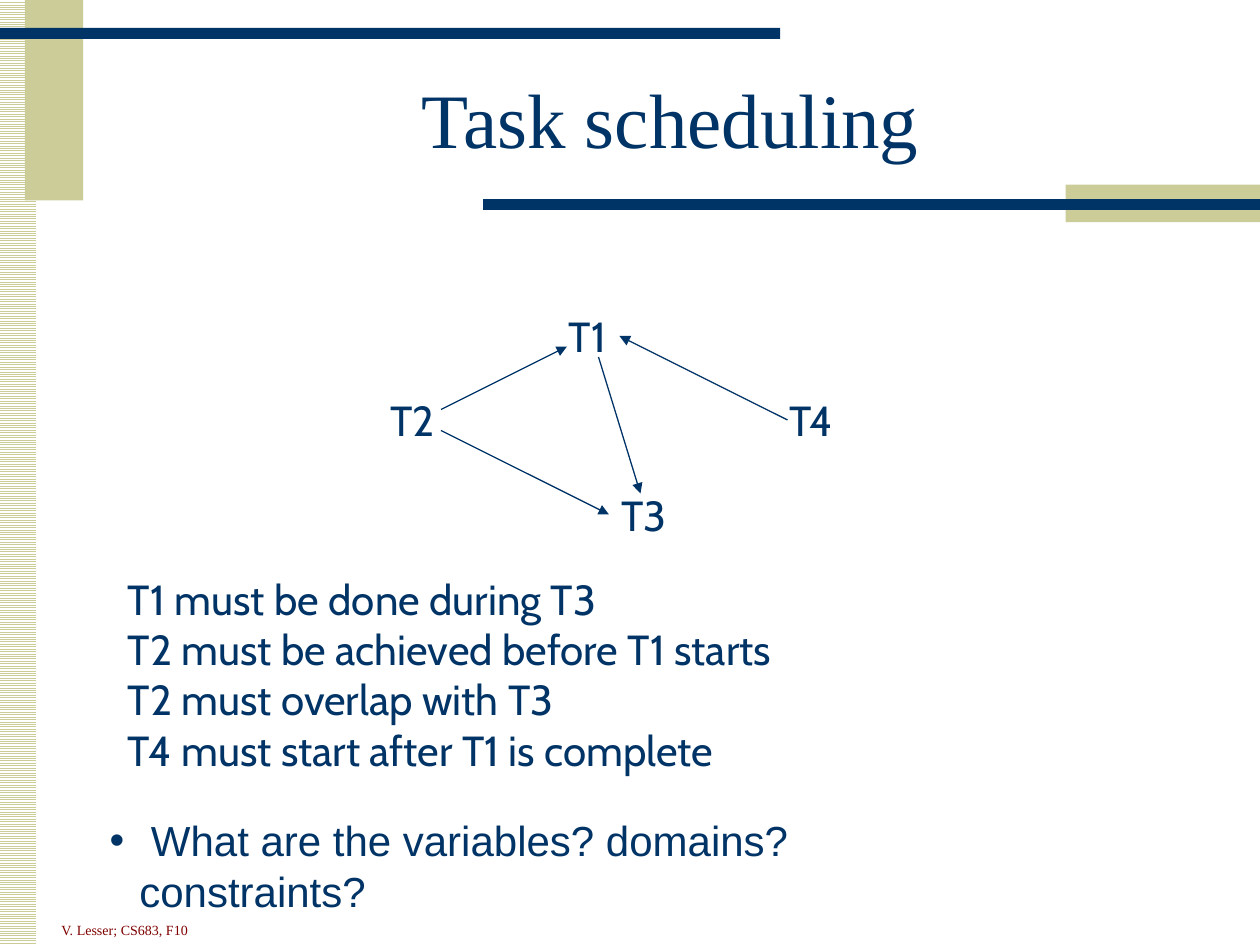
from dataclasses import dataclass

from lxml.etree import SubElement
from pptx import Presentation
from pptx.dml.color import RGBColor
from pptx.enum.dml import MSO_PATTERN
from pptx.enum.shapes import MSO_CONNECTOR, MSO_SHAPE
from pptx.enum.text import MSO_ANCHOR, PP_ALIGN
from pptx.oxml.ns import qn
from pptx.util import Pt


@dataclass(frozen=True)
class Theme:
    navy: RGBColor = RGBColor(0x00, 0x33, 0x66)
    khaki: RGBColor = RGBColor(0xCC, 0xCC, 0x99)
    white: RGBColor = RGBColor(0xFF, 0xFF, 0xFF)
    maroon: RGBColor = RGBColor(0x80, 0x00, 0x00)
    serif: str = "Times New Roman"
    sans: str = "Arial"
    label: str = "Cabin"
    title_size: int = 44
    body_size: int = 24
    footer_size: int = 8
    line_width: float = 0.75


THEME = Theme()
NODE_SIZE = (42, 36)
NODES = {"T1": (318, 174), "T2": (216, 222), "T3": (348, 276), "T4": (444, 222)}
ARROWS = [
    ((342, 204), (366, 282)),
    ((252, 234), (324, 198)),
    ((252, 246), (348, 294)),
    ((450, 240), (354, 192)),
]
RULES = [
    "T1 must be done during T3",
    "T2 must be achieved before T1 starts",
    "T2 must overlap with T3",
    "T4 must start after T1 is complete",
]


def add_bar(s, box, color, striped=False):
    sp = s.shapes.add_shape(MSO_SHAPE.RECTANGLE, *map(Pt, box))
    sp.shadow.inherit = False
    sp.line.fill.background()
    if striped:
        sp.fill.patterned()
        sp.fill.pattern = MSO_PATTERN.LIGHT_HORIZONTAL
        sp.fill.fore_color.rgb = color
        sp.fill.back_color.rgb = THEME.white
    else:
        sp.fill.solid()
        sp.fill.fore_color.rgb = color


def add_bullet(p, indent):
    pPr = p._p.get_or_add_pPr()
    pPr.set("marL", str(Pt(indent)))
    pPr.set("indent", str(-Pt(indent)))
    SubElement(pPr, qn("a:buFont")).set("typeface", THEME.sans)
    SubElement(pPr, qn("a:buChar")).set("char", "•")


def add_text(s, text, box, *, font=THEME.label, size=THEME.body_size,
             color=THEME.navy, align=PP_ALIGN.LEFT, anchor=MSO_ANCHOR.TOP,
             spacing=None, bullet_indent=None):
    tf = s.shapes.add_textbox(*map(Pt, box)).text_frame
    tf.word_wrap = True
    tf.vertical_anchor = anchor
    tf.text = text
    for p in tf.paragraphs:
        p.alignment = align
        if spacing:
            p.line_spacing = spacing
        if bullet_indent:
            add_bullet(p, bullet_indent)
        for r in p.runs:
            r.font.name = font
            r.font.size = Pt(size)
            r.font.color.rgb = color


def add_arrow(s, start, end):
    c = s.shapes.add_connector(MSO_CONNECTOR.STRAIGHT, *map(Pt, start + end))
    c.line.color.rgb = THEME.navy
    c.line.width = Pt(THEME.line_width)
    SubElement(c.line._get_or_add_ln(), qn("a:tailEnd")).set("type", "triangle")
    SubElement(c._element.spPr, qn("a:effectLst"))


def add_decoration(s):
    add_bar(s, (-20, 0, 40.5, 540), THEME.khaki, striped=True)
    add_bar(s, (14.25, 0, 33.25, 114.5), THEME.khaki)
    add_bar(s, (0, 16, 445.75, 6.25), THEME.navy)
    add_bar(s, (609, 105.5, 111, 21.5), THEME.khaki)
    add_bar(s, (276, 113.75, 444, 6.25), THEME.navy)


def add_task_graph(s):
    for name, corner in NODES.items():
        add_text(s, name, corner + NODE_SIZE)
    for start, end in ARROWS:
        add_arrow(s, start, end)


def main():
    prs = Presentation()
    prs.slide_width, prs.slide_height = Pt(720), Pt(540)
    s = prs.slides.add_slide(prs.slide_layouts[6])
    add_decoration(s)
    add_text(s, "Task scheduling", (59, 28.5, 648, 86), font=THEME.serif,
             size=THEME.title_size, align=PP_ALIGN.CENTER,
             anchor=MSO_ANCHOR.MIDDLE, spacing=0.85)
    add_text(s, "\n".join(RULES), (66, 324, 412, 122.5))
    add_task_graph(s)
    add_text(s, " What are the variables? domains? constraints?",
             (55.5, 462, 530, 36), font=THEME.sans, bullet_indent=17)
    add_text(s, "V. Lesser; CS683, F10", (28, 512.5, 125.5, 27.5),
             font=THEME.serif, size=THEME.footer_size, color=THEME.maroon,
             anchor=MSO_ANCHOR.BOTTOM)
    prs.save("out.pptx")


if __name__ == "__main__":
    main()
